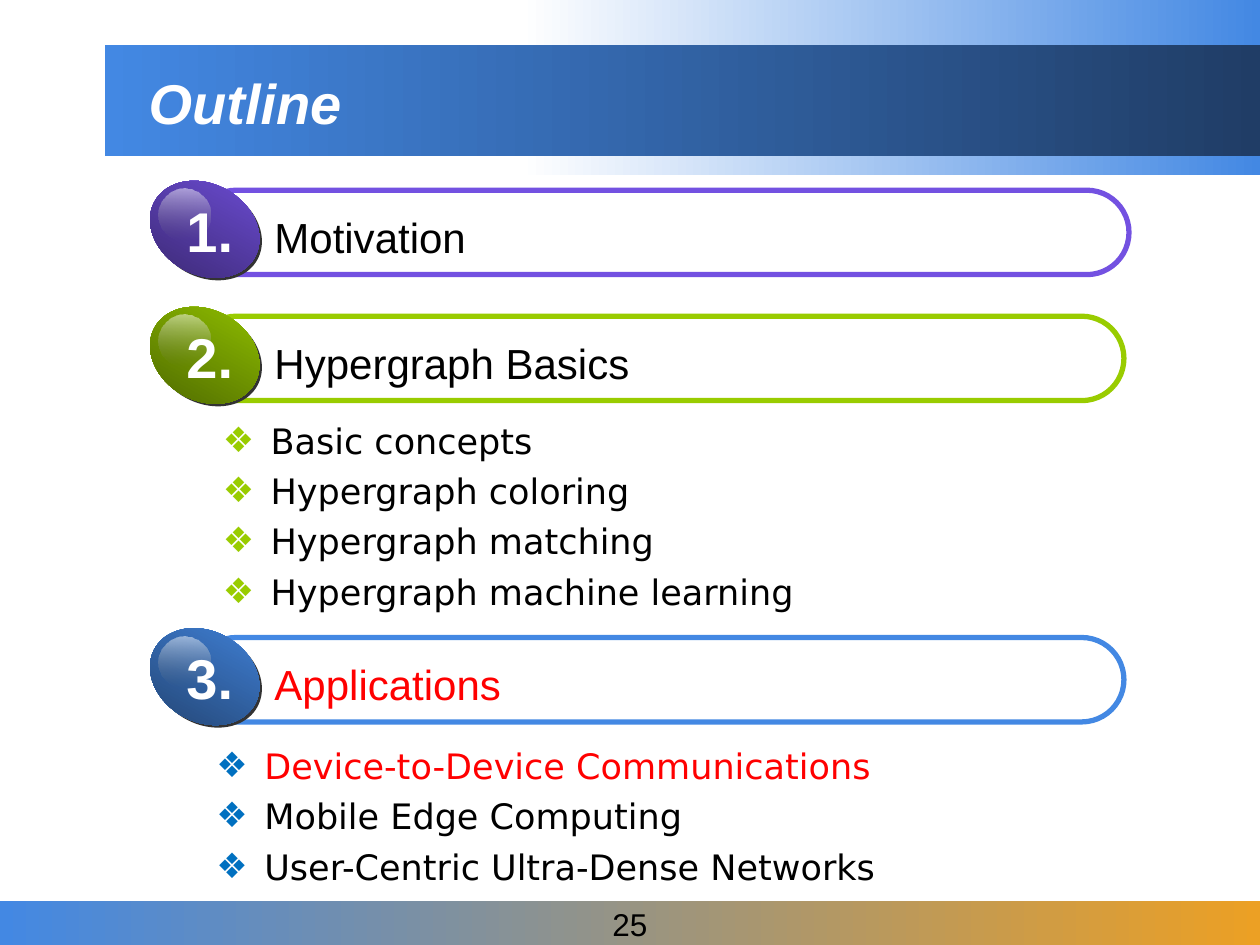
import pptx
import pptx.util
import pptx.dml.color
import pptx.enum.shapes
import pptx.enum.text
import pptx.oxml
from pptx.util import Inches

COLORS = {
    "white": "FFFFFF", "black": "000000", "red": "FF0000", "shadow": "333333",
    "gloss": "767676", "blue": "4388E3", "navy": "203D66", "orange": "ECA024",
    "purple": "7351E1", "dark purple": "342465",
    "green": "99CC00", "dark green": "455C00", "bullet blue": "0070C0",
}
TITLE = "Outline"
PAGE_NUMBER = "25"
# left, top, width, height, start colour, end colour
BANDS = [
    (4.13, 0, 5.87, 1.39, "white", "blue"),
    (0, 7.15, 10, 0.36, "blue", "orange"),
    (0.83, 0.36, 9.17, 0.88, "blue", "navy"),
]
# heading, heading width, text colour, top, bar width, light and dark colours
SECTIONS = [
    ("Motivation", 1.74, "black", 1.51, 7.42, "purple", "dark purple"),
    ("Hypergraph Basics", 3.05, "black", 2.51, 7.38, "green", "dark green"),
    ("Applications", 2.02, "red", 5.06, 7.38, "blue", "navy"),
]
# left, top, height, bullet colour, items with their colours
LISTS = [
    (1.67, 3.28, 1.64, "green", [
        ("Basic concepts", "black"),
        ("Hypergraph coloring", "black"),
        ("Hypergraph matching", "black"),
        ("Hypergraph machine learning", "black"),
    ]),
    (1.62, 5.86, 1.39, "bullet blue", [
        ("Device-to-Device Communications", "red"),
        ("Mobile Edge Computing", "black"),
        ("User-Centric Ultra-Dense Networks", "black"),
    ]),
]
SHAPES = pptx.enum.shapes.MSO_SHAPE
ALIGN = pptx.enum.text.PP_ALIGN
ANCHOR = pptx.enum.text.MSO_ANCHOR
AUTO_SIZE = pptx.enum.text.MSO_AUTO_SIZE


def rgb(name):
    return pptx.dml.color.RGBColor.from_string(COLORS[name])


def add_drawing_element(parent, tag, **attributes):
    element = pptx.oxml.parse_xml(
        f'<a:{tag} xmlns:a="http://schemas.openxmlformats.org/drawingml/2006/main"/>')
    for name, value in attributes.items():
        element.set(name, str(value))
    parent.append(element)
    return element


def add_bullet(paragraph, color):
    properties = paragraph._p.get_or_add_pPr()
    properties.set("marL", str(Inches(0.38)))
    properties.set("indent", str(-Inches(0.38)))
    bullet_color = add_drawing_element(properties, "buClr")
    add_drawing_element(bullet_color, "srgbClr", val=COLORS[color])
    add_drawing_element(properties, "buFont", typeface="DejaVu Sans")
    add_drawing_element(properties, "buChar", char="❖")


def write_text(paragraph, text, size=24, color="black", font="Arial", bold=False,
               italic=False, align=ALIGN.LEFT):
    paragraph.alignment = align
    run = paragraph.add_run()
    run.text = text
    run.font.size = pptx.util.Pt(size)
    run.font.name = font
    run.font.bold = bold
    run.font.italic = italic
    run.font.color.rgb = rgb(color)


def add_label(slide, box, text, **text_format):
    frame = slide.shapes.add_textbox(*map(Inches, box)).text_frame
    frame.word_wrap = False
    frame.auto_size = AUTO_SIZE.SHAPE_TO_FIT_TEXT
    write_text(frame.paragraphs[0], text, **text_format)


def add_filled_shape(shapes, kind, box, start, end=None, angle=0, alphas=(), rotation=0):
    """Fill with one colour, or with a gradient when an end colour is given."""
    shape = shapes.add_shape(kind, *map(Inches, box))
    shape.shadow.inherit = False
    shape.line.fill.background()
    shape.rotation = rotation
    if end is None:
        shape.fill.solid()
        shape.fill.fore_color.rgb = rgb(start)
        return shape
    shape.fill.gradient()
    shape.fill.gradient_angle = angle
    for stop, color, position in zip(shape.fill.gradient_stops, (start, end), (0, 1)):
        stop.color.rgb = rgb(color)
        stop.position = position
    color_elements = shape._element.spPr.xpath("./a:gradFill//a:srgbClr")
    for element, alpha in zip(color_elements, alphas):
        add_drawing_element(element, "alpha", val=alpha * 1000)
    return shape


def add_section(slide, number, section):
    heading, heading_width, text_color, top, bar_width, light, dark = section
    bar = slide.shapes.add_shape(
        SHAPES.ROUNDED_RECTANGLE, *map(Inches, (1.54, top, bar_width, 0.67)))
    bar.adjustments[0] = 0.5
    bar.shadow.inherit = False
    bar.fill.background()
    bar.line.color.rgb = rgb(light)
    bar.line.width = pptx.util.Pt(3)

    ball = slide.shapes.add_group_shape().shapes
    add_filled_shape(ball, SHAPES.OVAL, (1.19, top - 0.03, 0.91, 0.72), "shadow",
                     rotation=29.3)
    add_filled_shape(ball, SHAPES.OVAL, (1.17, top - 0.05, 0.91, 0.72), light, dark,
                     angle=270, rotation=29.3)
    add_filled_shape(ball, SHAPES.OVAL, (1.26, top - 0.01, 0.41, 0.41), "white", "gloss",
                     angle=270, alphas=(50, 0))

    add_label(slide, (2.08, top + 0.12, heading_width, 0.51), heading, color=text_color)
    add_label(slide, (1.38, top, 0.57, 0.63), f"{number}.", size=32, color="white",
              bold=True, align=ALIGN.CENTER)


def add_list(slide, left, top, height, bullet_color, items):
    frame = slide.shapes.add_textbox(*map(Inches, (left, top, 6.84, height))).text_frame
    frame.word_wrap = True
    for index, (text, color) in enumerate(items):
        paragraph = frame.add_paragraph() if index else frame.paragraphs[0]
        add_bullet(paragraph, bullet_color)
        if index:
            paragraph.space_before = pptx.util.Pt(4.7)
        write_text(paragraph, text, size=20, color=color, font="DejaVu Sans")


def add_title(slide):
    title = slide.shapes.title
    title.left, title.top, title.width, title.height = map(Inches, (1.08, 0.5, 8.75, 0.62))
    title.text_frame.vertical_anchor = ANCHOR.MIDDLE
    title.text_frame.auto_size = AUTO_SIZE.NONE
    write_text(title.text_frame.paragraphs[0], TITLE, size=32, color="white", bold=True,
               italic=True)
    slide.shapes._spTree.append(title._element)  # bring in front of the bands


def main():
    presentation = pptx.Presentation()
    presentation.slide_width, presentation.slide_height = Inches(10), Inches(7.5)
    slide = presentation.slides.add_slide(presentation.slide_layouts[5])

    bands = [add_filled_shape(slide.shapes, SHAPES.RECTANGLE, band[:4], *band[4:])
             for band in BANDS]
    footer = bands[1].text_frame
    footer.word_wrap = False
    footer.vertical_anchor = ANCHOR.MIDDLE
    write_text(footer.paragraphs[0], PAGE_NUMBER, size=18, align=ALIGN.CENTER)

    add_title(slide)
    for number, section in enumerate(SECTIONS, start=1):
        add_section(slide, number, section)
    for bullet_list in LISTS:
        add_list(slide, *bullet_list)
    presentation.save("out.pptx")


if __name__ == "__main__":
    main()
